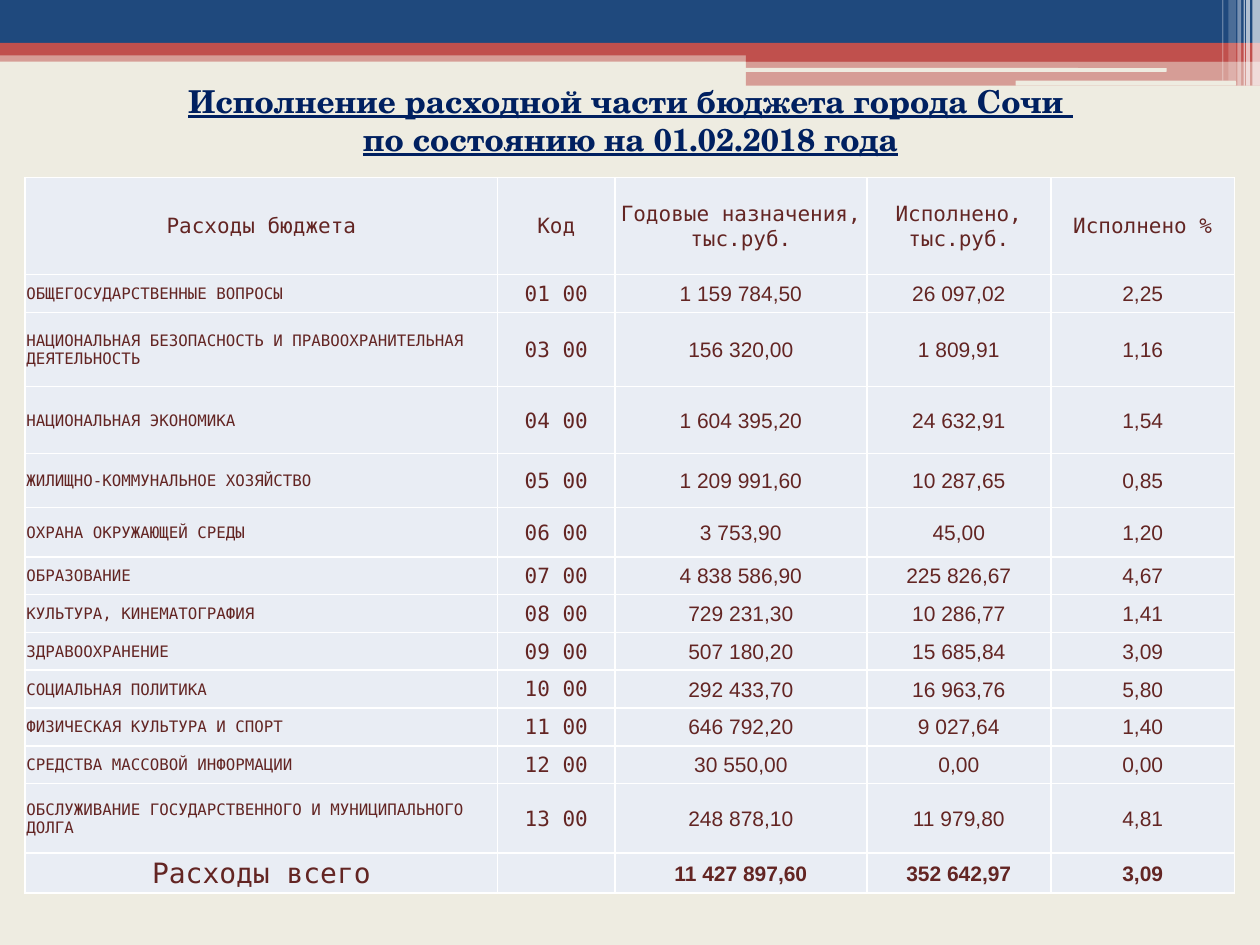
from pptx import Presentation
from pptx.dml import color
from pptx.enum import shapes, text
from pptx.oxml import parse_xml
from pptx.oxml import ns
from pptx.util import Inches, Pt

MONO, SANS, SERIF = "DejaVu Sans Mono", "Arial", "TeX Gyre Schola"
NAVY, RED, CREAM, WHITE = "1F497D", "C0504D", "EEECE1", "FFFFFF"
TITLE_COLOR, TABLE_COLOR, CELL_COLOR = "002060", "632523", "E9EDF4"

BANDS = [
    (0, 0.4, 10, 0.09, RED, 50),
    (0, 0, 10, 0.34, NAVY, 100),
    (0, 0.34, 10, 0.1, RED, 100),
    (5.92, 0.39, 4.08, 0.1, RED, 100),
    (5.92, 0.48, 4.08, 0.2, RED, 50),
]
SLITS = [(5.91, 0.54, 3.35, 0.03), (8.06, 0.64, 1.75, 0.04)]
STRIPES = [
    (9.94, 0.06, 0.68, 65),
    (9.89, 0.03, 0.68, 65),
    (9.87, 0.01, 0.68, 60),
    (9.82, 0.03, 0.68, 40),
    (9.75, 0.06, 0.64, 20),
    (9.7, 0.01, 0.64, 30),
]

TITLE = ["Исполнение расходной части бюджета города Сочи ",
         "по состоянию на 01.02.2018 года"]
HEADINGS = ["Расходы бюджета", "Код", "Годовые назначения, тыс.руб.",
            "Исполнено, тыс.руб.", "Исполнено %"]
EXPENSES = [
    ("ОБЩЕГОСУДАРСТВЕННЫЕ ВОПРОСЫ", "01 00", "1 159 784,50", "26 097,02", "2,25"),
    ("НАЦИОНАЛЬНАЯ БЕЗОПАСНОСТЬ И ПРАВООХРАНИТЕЛЬНАЯ ДЕЯТЕЛЬНОСТЬ", "03 00",
     "156 320,00", "1 809,91", "1,16"),
    ("НАЦИОНАЛЬНАЯ ЭКОНОМИКА", "04 00", "1 604 395,20", "24 632,91", "1,54"),
    ("ЖИЛИЩНО-КОММУНАЛЬНОЕ ХОЗЯЙСТВО", "05 00", "1 209 991,60", "10 287,65", "0,85"),
    ("ОХРАНА ОКРУЖАЮЩЕЙ СРЕДЫ", "06 00", "3 753,90", "45,00", "1,20"),
    ("ОБРАЗОВАНИЕ", "07 00", "4 838 586,90", "225 826,67", "4,67"),
    ("КУЛЬТУРА, КИНЕМАТОГРАФИЯ", "08 00", "729 231,30", "10 286,77", "1,41"),
    ("ЗДРАВООХРАНЕНИЕ", "09 00", "507 180,20", "15 685,84", "3,09"),
    ("СОЦИАЛЬНАЯ ПОЛИТИКА", "10 00", "292 433,70", "16 963,76", "5,80"),
    ("ФИЗИЧЕСКАЯ КУЛЬТУРА И СПОРТ", "11 00", "646 792,20", "9 027,64", "1,40"),
    ("СРЕДСТВА МАССОВОЙ ИНФОРМАЦИИ", "12 00", "30 550,00", "0,00", "0,00"),
    ("ОБСЛУЖИВАНИЕ ГОСУДАРСТВЕННОГО И МУНИЦИПАЛЬНОГО ДОЛГА", "13 00",
     "248 878,10", "11 979,80", "4,81"),
]
TOTALS = ["Расходы всего", "", "11 427 897,60", "352 642,97", "3,09"]
COLUMN_WIDTHS = [3.75, 0.93, 2, 1.46, 1.46]
ROW_HEIGHTS = [0.77, 0.3, 0.59, 0.53, 0.43, 0.39] + [0.3] * 6 + [0.55, 0.32]


def rgb(value):
    return color.RGBColor.from_string(value)


def write(frame, lines, font=MONO, size=12, tint=TABLE_COLOR, bold=False,
          underline=False, align=text.PP_ALIGN.CENTER):
    for index, line in enumerate(lines):
        paragraph = frame.add_paragraph() if index else frame.paragraphs[0]
        paragraph.alignment = align
        if not line:
            continue
        run = paragraph.add_run()
        run.text = line
        run.font.name = font
        run.font.size = Pt(size)
        run.font.color.rgb = rgb(tint)
        run.font.bold = bold
        run.font.underline = underline


def add_band(slide, left, top, width, height, tint, opacity=100,
             kind=shapes.MSO_SHAPE.RECTANGLE):
    band = slide.shapes.add_shape(
        kind, Inches(left), Inches(top), Inches(width), Inches(height))
    band.shadow.inherit = False
    band.line.fill.background()
    band.fill.solid()
    band.fill.fore_color.rgb = rgb(tint)
    if opacity < 100:
        tint_element = band.fill._xPr.find(".//" + ns.qn("a:srgbClr"))
        tint_element.append(parse_xml(
            f'<a:alpha {ns.nsdecls("a")} val="{opacity * 1000}"/>'))


def add_title(slide):
    title = slide.shapes.title
    title.left, title.top = Inches(0.2), Inches(0.6)
    title.width, title.height = Inches(9.61), Inches(0.71)
    frame = title.text_frame
    frame.word_wrap = True
    frame.auto_size = text.MSO_AUTO_SIZE.SHAPE_TO_FIT_TEXT
    frame.vertical_anchor = text.MSO_ANCHOR.TOP
    write(frame, TITLE, font=SERIF, size=18, tint=TITLE_COLOR, bold=True,
          underline=True)


def format_cell(cell):
    cell.margin_left = cell.margin_top = cell.margin_right = Inches(0.01)
    cell.margin_bottom = 0
    cell.vertical_anchor = text.MSO_ANCHOR.MIDDLE
    properties = cell._tc.get_or_add_tcPr()
    for side in ("lnL", "lnR", "lnT", "lnB"):
        properties.append(parse_xml(
            f'<a:{side} {ns.nsdecls("a")} w="{Pt(1)}"><a:solidFill>'
            f'<a:srgbClr val="{WHITE}"/></a:solidFill></a:{side}>'))
    cell.fill.solid()
    cell.fill.fore_color.rgb = rgb(CELL_COLOR)


def cell_format(row, column):
    total_row = len(EXPENSES) + 1
    if row and column > 1:
        return {"font": SANS, "bold": row == total_row}
    if row == total_row:
        return {"size": 16}
    if row and column == 0:
        return {"size": 9, "align": text.PP_ALIGN.LEFT}
    return {}


def add_budget_table(slide):
    rows = [HEADINGS, *EXPENSES, TOTALS]
    budget = slide.shapes.add_table(
        len(rows), len(HEADINGS), Inches(0.2), Inches(1.41),
        Inches(sum(COLUMN_WIDTHS)), Inches(sum(ROW_HEIGHTS))).table
    budget.first_row = budget.horz_banding = False
    for column, width in zip(budget.columns, COLUMN_WIDTHS):
        column.width = Inches(width)
    for row, height in zip(budget.rows, ROW_HEIGHTS):
        row.height = Inches(height)
    for row, values in enumerate(rows):
        for column, value in enumerate(values):
            cell = budget.cell(row, column)
            format_cell(cell)
            write(cell.text_frame, [value], **cell_format(row, column))


def main():
    deck = Presentation()
    deck.slide_width, deck.slide_height = Inches(10), Inches(7.5)
    slide = deck.slides.add_slide(deck.slide_layouts[5])
    slide.background.fill.solid()
    slide.background.fill.fore_color.rgb = rgb(CREAM)
    for band in BANDS:
        add_band(slide, *band)
    for slit in SLITS:
        add_band(slide, *slit, CREAM, kind=shapes.MSO_SHAPE.ROUNDED_RECTANGLE)
    for left, width, height, opacity in STRIPES:
        add_band(slide, left, 0, width, height, WHITE, opacity)
    add_budget_table(slide)
    add_title(slide)
    deck.save("out.pptx")


if __name__ == "__main__":
    main()
